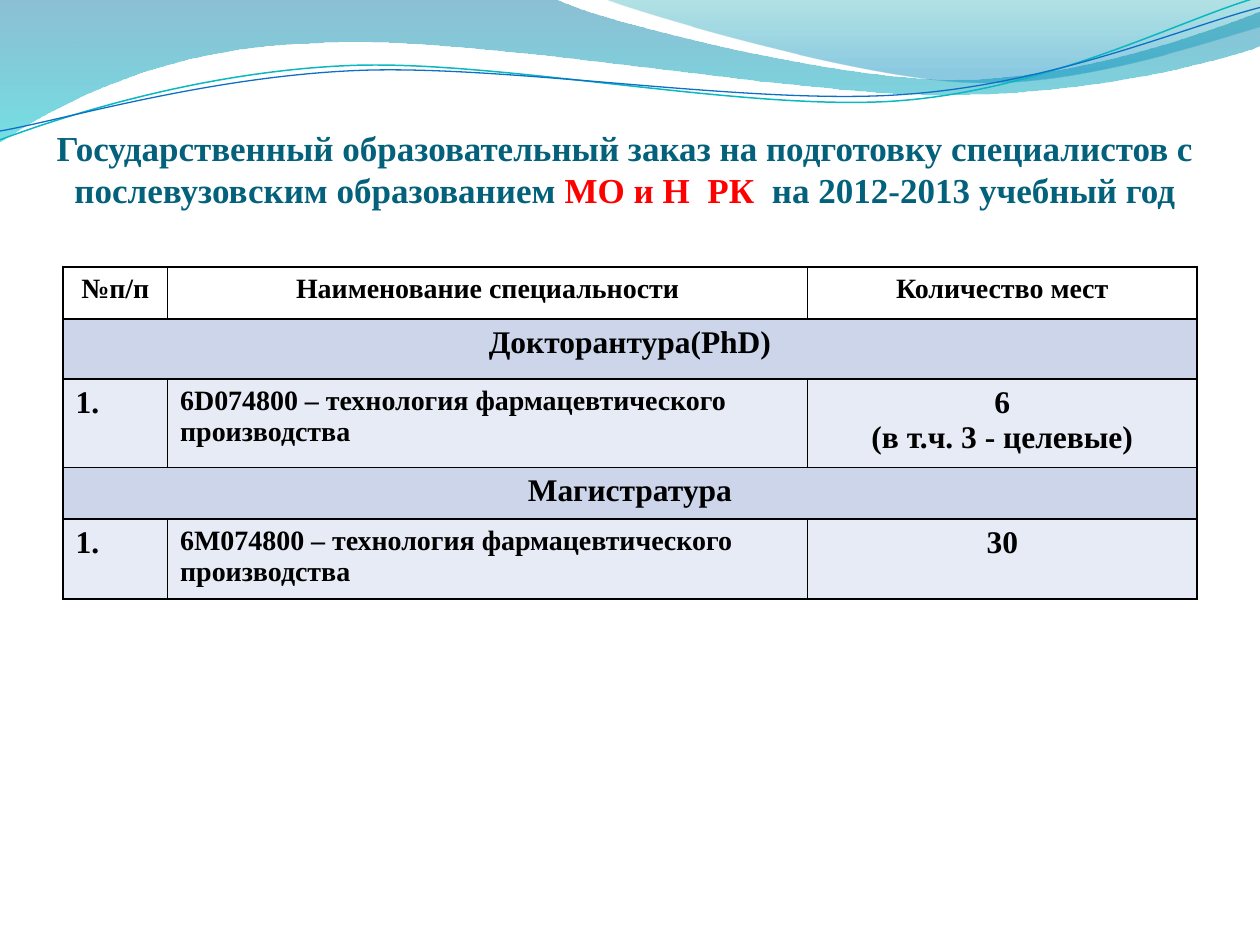
"""Slide with the state order for postgraduate places, under a wave header."""
from math import cos, radians, sin

from lxml import etree
from pptx import Presentation
from pptx.dml.color import RGBColor
from pptx.enum.text import MSO_ANCHOR, PP_ALIGN
from pptx.oxml.ns import qn
from pptx.util import Inches, Pt

CENTER, LEFT = PP_ALIGN.CENTER, PP_ALIGN.LEFT
BOTTOM = MSO_ANCHOR.BOTTOM
FONT = "Times New Roman"
TILT = 2.7
COLORS = {
    "title": "04617B", "accent": "FF0000", "text": "000000", "header": "FFFFFF",
    "section": "CCD5EA", "row": "E7EBF5", "teal_line": "0AB8BF", "blue_line": "0F6FC6",
}


def format_run(run, size, color):
    run.font.name = FONT
    run.font.size = Pt(size)
    run.font.bold = True
    run.font.color.rgb = RGBColor.from_string(COLORS[color])


def add_wave(start, segments, closed):
    points = [start]
    for segment in segments:
        points.extend(zip(segment[::2], segment[1::2]))
    points = [(Inches(x), Inches(y)) for x, y in points]
    builder = slide.shapes.build_freeform(*points[0], scale=1.0)
    builder.add_line_segments(points[1:], close=closed)
    shape = builder.convert_to_shape()
    shape.shadow.inherit = False
    line_parts = iter(list(shape.element.iter(qn("a:lnTo"))))
    for segment in segments:
        first = next(line_parts)
        if len(segment) == 6:
            first.tag = qn("a:cubicBezTo")
            for part in (next(line_parts), next(line_parts)):
                first.append(part[0])
                part.getparent().remove(part)
    return shape


presentation = Presentation()
presentation.slide_width = Inches(10)
presentation.slide_height = Inches(7.5)
slide = presentation.slides.add_slide(presentation.slide_layouts[6])

filled_waves = [
    ((0, 0),
     [(4.4, -0.01), (4.76, 0.17, 6.64, 0.63, 7.58, 0.63), (8.53, 0.63, 9.58, 0.26, 10, 0.09),
      (10.01, 0.36), (9.83, 0.44, 8.7, 0.76, 7.46, 0.75), (6.22, 0.75, 3.82, 0.28, 2.57, 0.34),
      (1.29, 0.36, 0.46, 0.83, -0.01, 1.13), (0, 0)],
     [(0, "0074A1", 45), (1, "00C6CF", 55)]),
    ((4.79, -0.01),
     [(5.09, 0.11, 6.82, 0.62, 7.69, 0.65), (8.56, 0.69, 9.61, 0.32, 10, 0.21), (10, 0),
      (4.79, -0.01)],
     [(0, "00A1A9", 30), (0.8, "008BBF", 45)]),
]
for start, segments, stops in filled_waves:
    wave = add_wave(start, segments, True)
    wave.line.fill.background()
    wave.fill.gradient()
    wave.fill.gradient_angle = 270
    for stop, (position, color, opacity) in zip(wave.fill.gradient_stops, stops):
        stop.position = position
        stop.color.rgb = RGBColor.from_string(color)
    for element, (position, color, opacity) in zip(wave.element.iter(qn("a:srgbClr")), stops):
        etree.SubElement(element, qn("a:alpha"), val=str(opacity * 1000))

wave_lines = [
    ((0, 1.11),
     [(0.48, 0.93, 1.58, 0.57, 2.77, 0.52), (3.95, 0.47, 5.93, 0.89, 7.13, 0.8),
      (8.33, 0.71, 9.38, 0.15, 9.98, -0.02)], (4.99, 0.575), "teal_line", 0.85),
    ((0, 1.04),
     [(0.47, 0.96, 1.64, 0.61, 2.83, 0.56), (4.03, 0.51, 5.97, 0.84, 7.17, 0.75),
      (8.36, 0.67, 9.41, 0.21, 10, 0.06)], (5, 0.59), "blue_line", 0.75),
]
cosine, sine = cos(radians(TILT)), sin(radians(TILT))
for start, segments, (center_x, center_y), color, width in wave_lines:
    level = []
    for segment in [start] + segments:
        coordinates = []
        for x, y in zip(segment[::2], segment[1::2]):
            dx, dy = x - center_x, y - center_y
            coordinates += [center_x + dx * cosine - dy * sine,
                            center_y + dx * sine + dy * cosine]
        level.append(coordinates)
    wave = add_wave(tuple(level[0]), level[1:], False)
    wave.rotation = 360 - TILT
    wave.fill.background()
    wave.line.color.rgb = RGBColor.from_string(COLORS[color])
    wave.line.width = Pt(width)

title = slide.shapes.add_textbox(Inches(0.42), Inches(0.77), Inches(9.08), Inches(0.9))
title_frame = title.text_frame
title_frame.word_wrap = True
title_frame.vertical_anchor = BOTTOM
title_frame.margin_left = title_frame.margin_right = title_frame.margin_bottom = 0
title_frame.margin_top = Inches(0.05)
paragraph = title_frame.paragraphs[0]
paragraph.alignment = CENTER
for text, color in [
    ("Государственный образовательный заказ на подготовку специалистов с "
     "послевузовским образованием ", "title"),
    ("МО и Н  РК  ", "accent"),
    ("на 2012-2013 учебный год", "title"),
]:
    run = paragraph.add_run()
    run.text = text
    format_run(run, 20, color)

column_widths = [0.83, 5.08, 3.09]
row_heights = [0.41, 0.48, 0.41, 0.41, 0.41]
rows = [
    ("header", ["№п/п", "Наименование специальности", "Количество мест"]),
    ("section", ["Докторантура(PhD)", "", ""]),
    ("row", ["1.", "6D074800 – технология фармацевтического производства",
             "6\n(в т.ч. 3 - целевые)"]),
    ("section", ["Магистратура", "", ""]),
    ("row", ["1.", "6М074800 – технология фармацевтического производства", "30"]),
]
sizes = {"header": [16, 16, 16], "section": [18, 18, 18], "row": [18, 16, 18]}
alignments = {"header": [CENTER] * 3, "section": [CENTER] * 3, "row": [LEFT, LEFT, CENTER]}

table_frame = slide.shapes.add_table(len(rows), len(column_widths), Inches(0.5), Inches(2.12),
                                     Inches(9), Inches(2.62))
table = table_frame.table
for column, width in zip(table.columns, column_widths):
    column.width = Inches(width)
for row, height in zip(table.rows, row_heights):
    row.height = Inches(height)
table_frame.height = Inches(2.62)

for row_index, (kind, texts) in enumerate(rows):
    if kind == "section":
        table.cell(row_index, 0).merge(table.cell(row_index, 2))
    for column_index, text in enumerate(texts):
        cell = table.cell(row_index, column_index)
        cell.fill.solid()
        cell.fill.fore_color.rgb = RGBColor.from_string(COLORS[kind])
        properties = cell._tc.get_or_add_tcPr()
        for position, side in enumerate(["a:lnL", "a:lnR", "a:lnT", "a:lnB"]):
            border = etree.Element(qn(side), w=str(Pt(1)))
            border_fill = etree.SubElement(border, qn("a:solidFill"))
            etree.SubElement(border_fill, qn("a:srgbClr"), val=COLORS["text"])
            properties.insert(position, border)
        if cell.is_spanned:
            continue
        cell.text_frame.text = text
        for paragraph in cell.text_frame.paragraphs:
            paragraph.alignment = alignments[kind][column_index]
            for run in paragraph.runs:
                format_run(run, sizes[kind][column_index], "text")

presentation.save("out.pptx")
